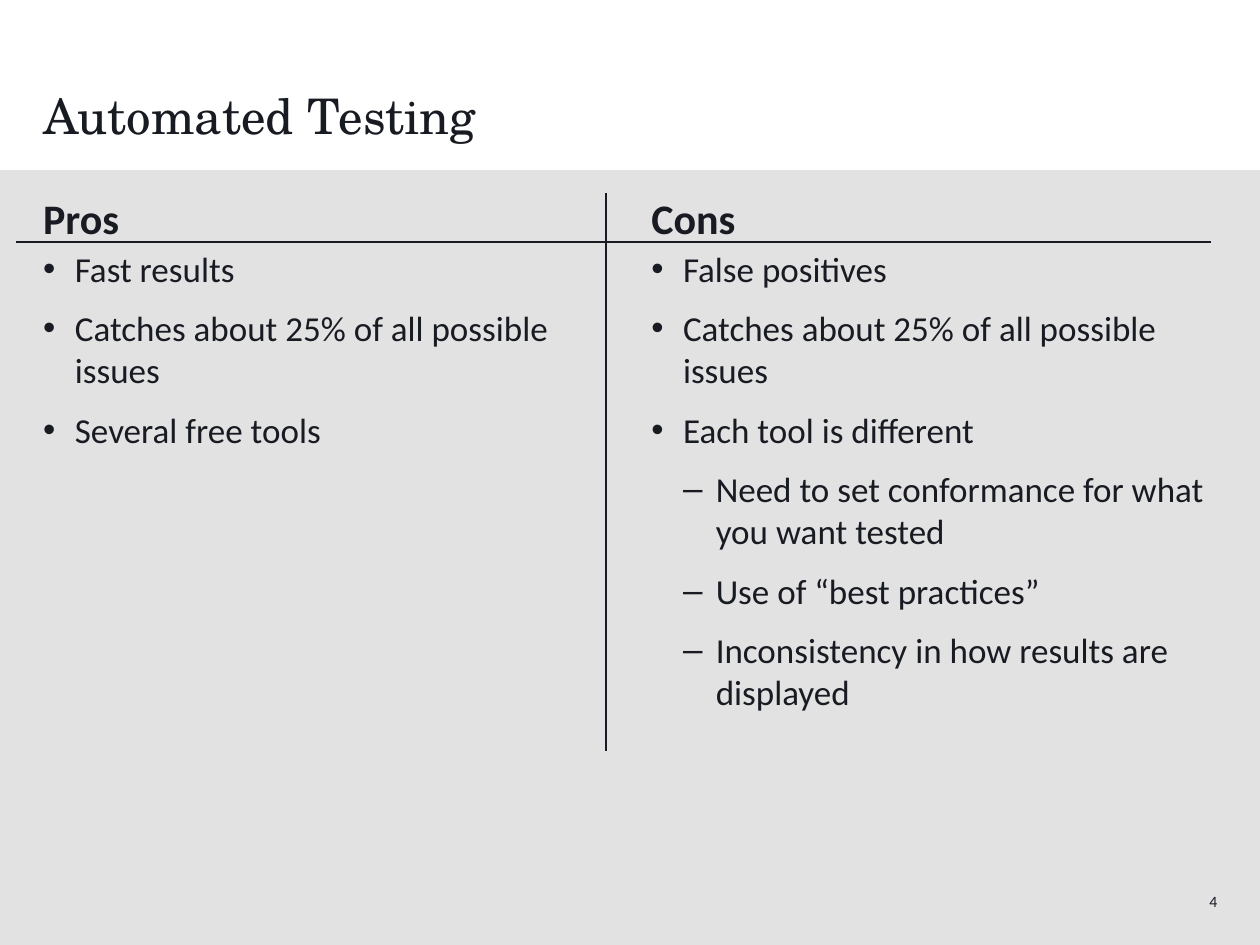
from lxml.etree import SubElement
from pptx import Presentation
from pptx.dml.color import RGBColor
from pptx.enum.shapes import MSO_CONNECTOR, MSO_SHAPE
from pptx.enum.text import MSO_ANCHOR, PP_ALIGN
from pptx.oxml.ns import qn
from pptx.util import Cm, Pt

COLORS = {"ink": "191B23", "panel": "E2E2E2"}
BODY_FONT = "Calibri"
TITLE_FONT = "TeX Gyre Schola"
LEFT_COLUMN, RIGHT_COLUMN = 0.87, 13.13
COLUMN_WIDTH = 11.79
# Per level: bullet, left margin, hanging indent in cm
BULLETS = [("•", 0.64, 0.64), ("–", 1.3, 0.66)]

PROS = [
    (0, "Fast results"),
    (0, "Catches about 25% of all possible issues"),
    (0, "Several free tools"),
]
CONS = [
    (0, "False positives"),
    (0, "Catches about 25% of all possible issues"),
    (0, "Each tool is different"),
    (1, "Need to set conformance for what you want tested"),
    (1, "Use of “best practices”"),
    (1, "Inconsistency in how results are displayed"),
]


def color(name):
    return RGBColor.from_string(COLORS[name])


def format_font(font, size, name=BODY_FONT, bold=False):
    font.name = name
    font.size = Pt(size)
    font.bold = bold
    font.color.rgb = color("ink")


def format_frame(frame, anchor=MSO_ANCHOR.TOP):
    """Wrap the text and remove the inner margins."""
    frame.word_wrap = True
    frame.vertical_anchor = anchor
    frame.margin_left = frame.margin_right = 0
    frame.margin_top = frame.margin_bottom = 0


def add_panel(slide, top, width, height):
    panel = slide.shapes.add_shape(
        MSO_SHAPE.RECTANGLE, 0, Cm(top), Cm(width), Cm(height))
    panel.shadow.inherit = False
    panel.fill.solid()
    panel.fill.fore_color.rgb = color("panel")
    panel.line.fill.background()


def add_rule(slide, x1, y1, x2, y2):
    rule = slide.shapes.add_connector(
        MSO_CONNECTOR.STRAIGHT, Cm(x1), Cm(y1), Cm(x2), Cm(y2))
    rule.line.color.rgb = color("ink")
    rule.line.width = Pt(1)
    SubElement(rule._element.spPr, qn("a:effectLst"))


def set_title(slide, text):
    title = slide.shapes.title
    title.left, title.top = Cm(LEFT_COLUMN), Cm(0.79)
    title.width, title.height = Cm(23.67), Cm(2.13)
    frame = title.text_frame
    frame.text = text
    format_frame(frame, MSO_ANCHOR.BOTTOM)
    paragraph = frame.paragraphs[0]
    paragraph.alignment = PP_ALIGN.LEFT
    paragraph.line_spacing = 0.9
    format_font(paragraph.runs[0].font, 28, TITLE_FONT)


def add_text(slide, left, top, width, height, text, size, bold=False,
             align=PP_ALIGN.LEFT, anchor=MSO_ANCHOR.TOP):
    box = slide.shapes.add_textbox(Cm(left), Cm(top), Cm(width), Cm(height))
    frame = box.text_frame
    frame.text = text
    format_frame(frame, anchor)
    frame.paragraphs[0].alignment = align
    format_font(frame.paragraphs[0].runs[0].font, size, bold=bold)


def add_bullet(paragraph, level):
    mark, margin, hanging = BULLETS[level]
    paragraph.level = level
    properties = paragraph._p.get_or_add_pPr()
    properties.set("marL", str(Cm(margin)))
    properties.set("indent", str(-Cm(hanging)))
    SubElement(properties, qn("a:buFont"), typeface="Arial")
    SubElement(properties, qn("a:buChar"), char=mark)


def add_bullet_list(slide, left, items):
    box = slide.shapes.add_textbox(
        Cm(left), Cm(4.98), Cm(COLUMN_WIDTH), Cm(10.62))
    frame = box.text_frame
    frame.text = "\n".join(text for _, text in items)
    format_frame(frame)
    for paragraph, (level, _) in zip(frame.paragraphs, items):
        add_bullet(paragraph, level)
        paragraph.space_after = Pt(10)
        format_font(paragraph.runs[0].font, 20)


def add_column(slide, left, heading, items):
    add_text(slide, left, 3.89, COLUMN_WIDTH, 1.08, heading, 24, bold=True)
    add_bullet_list(slide, left, items)


def main():
    presentation = Presentation()
    presentation.slide_width, presentation.slide_height = Cm(25.4), Cm(19.05)
    slide = presentation.slides.add_slide(presentation.slide_layouts[5])

    add_panel(slide, 3.43, 25.4, 15.62)
    add_text(slide, 22, 17.65, 2.54, 1.02, "4", 9,
             align=PP_ALIGN.RIGHT, anchor=MSO_ANCHOR.MIDDLE)
    add_rule(slide, 12.22, 3.89, 12.22, 15.14)
    add_rule(slide, 0.33, 4.88, 24.41, 4.88)
    set_title(slide, "Automated Testing")
    add_column(slide, LEFT_COLUMN, "Pros", PROS)
    add_column(slide, RIGHT_COLUMN, "Cons", CONS)

    presentation.save("out.pptx")


if __name__ == "__main__":
    main()
